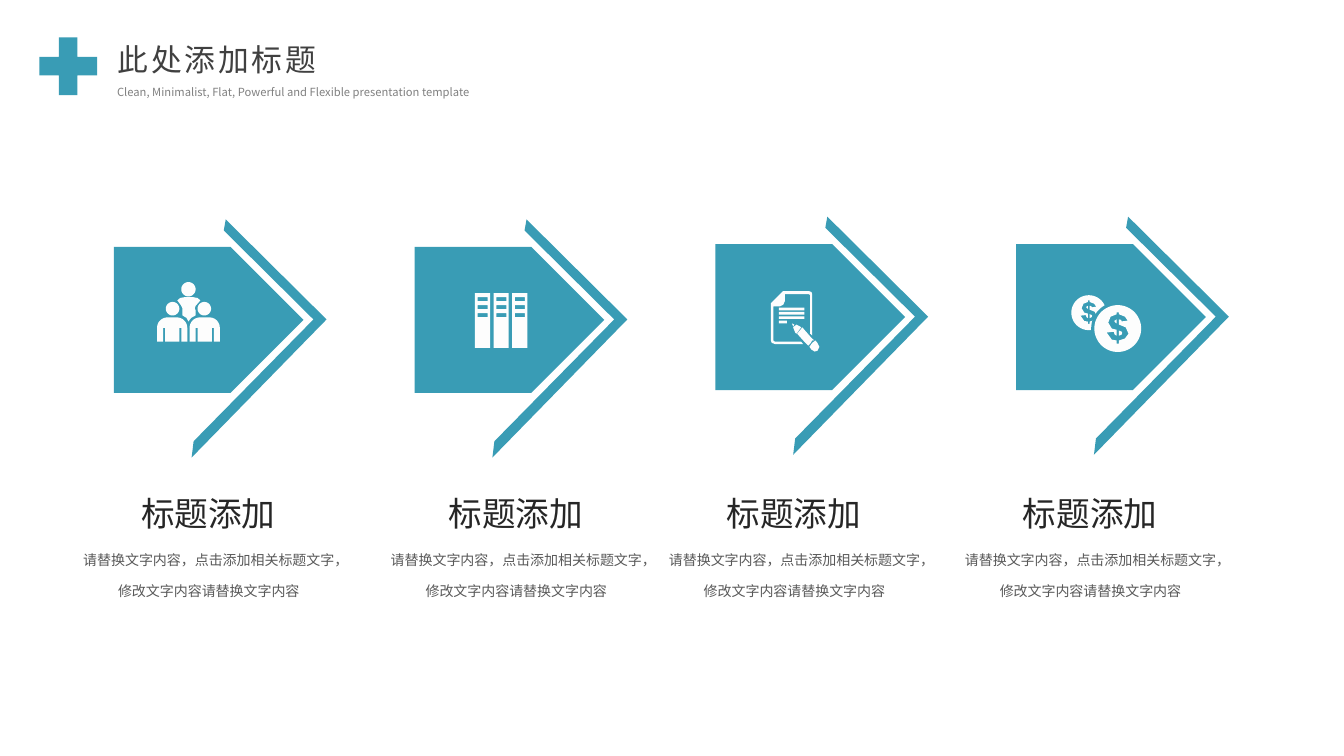
from dataclasses import dataclass
from math import cos, radians, sin

from lxml.etree import SubElement
from pptx import Presentation
from pptx.dml.color import RGBColor
from pptx.enum.shapes import MSO_SHAPE as Preset
from pptx.enum.text import MSO_ANCHOR as Anchor, MSO_AUTO_SIZE as AutoSize, PP_ALIGN as Align
from pptx.oxml.ns import qn
from pptx.util import Cm, Pt

TEAL = RGBColor(0x39, 0x9C, 0xB5)
ICON_WHITE = RGBColor(0xFD, 0xFD, 0xFD)
TITLE_GRAY = RGBColor(0x40, 0x40, 0x40)
SUBTITLE_GRAY = RGBColor(0x80, 0x80, 0x80)
HEADING_GRAY = RGBColor(0x26, 0x26, 0x26)
BODY_GRAY = RGBColor(0x59, 0x59, 0x59)
FONT = "Noto Sans CJK SC"

Points = list[tuple[float, float]]
HEADING = "标题添加"
BODY = "请替换文字内容，点击添加相关标题文字，修改文字内容请替换文字内容"


@dataclass
class Layer:
    contours: list[Points]
    color: RGBColor = ICON_WHITE


@dataclass
class Column:
    top: float
    text_left: float
    icon_x: float  # icon offset from the arrow's corner
    icon_y: float
    icon: list[Layer]


# Outline helpers, all in centimetres
def arc(cx: float, cy: float, r: float, start: int = 0, end: int = 360) -> Points:
    return [(cx + r * cos(radians(a)), cy + r * sin(radians(a)))
            for a in range(start, end + 1, 6)]


def rect(x: float, y: float, w: float, h: float) -> Points:
    return [(x, y), (x + w, y), (x + w, y + h), (x, y + h)]


def place(points: Points, dx: float, dy: float, scale: float = 1) -> Points:
    return [(dx + x * scale, dy + y * scale) for x, y in points]


def people_icon() -> list[Layer]:
    heads = [arc(0.79, 0.18, 0.18), arc(0.39, 0.67, 0.17), arc(1.19, 0.67, 0.17)]
    back_torso = [(0.97, 0.84), (0.97, 0.71), (0.95, 0.66), (0.97, 0.6), (1.09, 0.46),
                  (1.02, 0.4), (0.91, 0.38), (0.69, 0.38), (0.58, 0.4), (0.51, 0.46),
                  (0.6, 0.58), (0.64, 0.66), (0.64, 0.84), (0.74, 0.9), (0.79, 0.99),
                  (0.86, 0.9)]
    front_torso = [(0, 1.5), *arc(0.26, 1.15, 0.26, 180, 270), *arc(0.5, 1.15, 0.26, 270, 360),
                   (0.76, 1.5), (0.61, 1.5), (0.61, 1.15), (0.56, 1.15), (0.56, 1.5),
                   (0.2, 1.5), (0.2, 1.15), (0.15, 1.15), (0.15, 1.5)]
    return [Layer([*heads, back_torso, front_torso, place(front_torso, 0.82, 0)])]


def binders_icon() -> list[Layer]:
    contours = []
    for x in (0, 0.47, 0.94):
        contours.append(rect(x, 0, 0.38, 1.38))
        contours += [rect(x + 0.07, y, 0.25, 0.1) for y in (0.1, 0.3, 0.5)]
    return [Layer(contours)]


def document_icon() -> list[Layer]:
    page = [(0.06, 0.38), (0.23, 0.38), (0.31, 0.34), (0.35, 0.25), (0.35, 0.07), (0.95, 0.07),
            (0.99, 0.1), (0.99, 1.07), (1.04, 1.12), (1.04, 0.08), (1.02, 0.02), (0.97, 0),
            (0.3, 0), (0, 0.3), (0, 1.25), (0.02, 1.3), (0.1, 1.33), (0.81, 1.33),
            (0.76, 1.27), (0.1, 1.27), (0.06, 1.24)]
    lines = [rect(0.2, 0.41 + 0.11 * i, w, 0.07) for i, w in enumerate((0.64, 0.64, 0.64, 0.2))]
    pencil = [
        [(0.53, 0.81), (0.59, 0.84), (0.56, 0.89)],
        [(0.64, 1.07), (0.76, 0.91), (0.74, 0.89), (0.64, 0.84), (0.56, 0.91), (0.61, 1.04)],
        [(1.04, 1.24), (1.09, 1.24), (0.99, 1.14), (0.79, 0.91), (0.66, 1.07), (0.84, 1.27),
         (0.94, 1.37), (0.99, 1.32)],
        [(0.97, 1.4), (1.02, 1.47), (1.1, 1.52), (1.17, 1.5), (1.22, 1.4), (1.17, 1.3),
         (1.12, 1.24), (1.04, 1.3)],
    ]
    return [Layer([page, *lines, *pencil])]


def coin(cx: float, cy: float, r: float, sign_scale: float) -> Layer:
    dollar = [(0.25, -0.2), (0.1, -0.18), (0.08, -0.22), (0.03, -0.23), (0.03, -0.1),
              (0.2, -0.03), (0.27, 0.13), (0.18, 0.25), (0.03, 0.3), (0.03, 0.38),
              (-0.03, 0.38), (-0.03, 0.3), (-0.15, 0.28), (-0.28, 0.1), (-0.1, 0.08),
              (-0.08, 0.15), (-0.03, 0.18), (-0.03, 0.03), (-0.15, 0), (-0.24, -0.15),
              (-0.18, -0.3), (-0.03, -0.36), (-0.03, -0.41), (0.03, -0.41), (0.03, -0.36),
              (0.18, -0.3)]
    upper_bowl = [(-0.03, -0.23), (-0.09, -0.19), (-0.06, -0.15), (-0.03, -0.13)]
    lower_bowl = [(0.03, 0.18), (0.1, 0.15), (0.11, 0.11), (0.1, 0.08), (0.03, 0.05)]
    sign = [place(part, cx, cy, sign_scale) for part in (dollar, upper_bowl, lower_bowl)]
    return Layer([arc(cx, cy, r), *sign])


def coins_icon() -> list[Layer]:
    gap = Layer([arc(1.19, 0.84, 0.67)], TEAL)
    return [coin(0.46, 0.44, 0.44, 0.75), gap, coin(1.19, 0.84, 0.59, 1)]


# Drawing functions
def paint(sp, color: RGBColor) -> None:
    sp.shadow.inherit = False
    sp.fill.solid()
    sp.fill.fore_color.rgb = color
    sp.line.fill.background()


def draw_preset(s, kind, x: float, y: float, w: float, h: float) -> None:
    paint(s.shapes.add_shape(kind, Cm(x), Cm(y), Cm(w), Cm(h)), TEAL)


def draw_outline(s, layer: Layer, left: float, top: float) -> None:
    paths = [[(Cm(x), Cm(y)) for x, y in place(c, left, top)] for c in layer.contours]
    builder = s.shapes.build_freeform(*paths[0][0])
    for i, path in enumerate(paths):
        if i:
            builder.move_to(*path[0])
        builder.add_line_segments(path[1:], close=True)
    paint(builder.convert_to_shape(), layer.color)


def write_text(sp, text: str, x: float, y: float, w: float, h: float, *, size: float,
               color: RGBColor, align=Align.LEFT, line: float = 1, wrap: bool = True,
               inset_x: float = 0.25, inset_y: float = 0.13, spacing: int = 0) -> None:
    sp.left, sp.top, sp.width, sp.height = Cm(x), Cm(y), Cm(w), Cm(h)
    tf = sp.text_frame
    tf.word_wrap, tf.auto_size, tf.vertical_anchor = wrap, AutoSize.NONE, Anchor.TOP
    tf.margin_left = tf.margin_right = Cm(inset_x)
    tf.margin_top = tf.margin_bottom = Cm(inset_y)
    p = tf.paragraphs[0]
    p.alignment, p.line_spacing = align, line
    r = p.add_run()
    r.text = text
    r.font.size, r.font.name, r.font.color.rgb = Pt(size), FONT, color
    props = r.font._element
    SubElement(props, qn("a:ea"), typeface=FONT)
    if spacing:
        props.set("spc", str(spacing))


def add_box(s):
    return s.shapes.add_textbox(0, 0, 0, 0)


CHEVRON = Layer([[(2.82, -0.69), (5.36, 1.83), (1.96, 5.31), (2.01, 4.9), (5.03, 1.83),
                  (2.77, -0.41)]], TEAL)
FIRST_LEFT, PITCH = 2.87, 7.58
COLUMNS = [
    Column(6.22, 1.78, 1.09, 0.89, people_icon()),
    Column(6.22, 9.53, 1.52, 1.17, binders_icon()),
    Column(6.15, 16.54, 1.4, 1.19, document_icon()),
    Column(6.15, 24.0, 1.37, 1.29, coins_icon()),
]


def main() -> None:
    prs = Presentation()
    prs.slide_width, prs.slide_height = Cm(33.87), Cm(19.05)
    s = prs.slides.add_slide(prs.slide_layouts[5])

    # Header
    write_text(s.shapes.title, "此处添加标题", 2.77, 0.92, 7.42, 1.14, size=22,
               color=TITLE_GRAY, inset_x=0.2, inset_y=0.1, spacing=200)
    draw_preset(s, Preset.MATH_PLUS, 0.73, 0.68, 1.98, 1.98)
    write_text(add_box(s), "Clean, Minimalist, Flat, Powerful and Flexible presentation template",
               2.7, 1.92, 13.79, 0.66, size=8, color=SUBTITLE_GRAY, line=1.3)

    # Arrows with icons and captions
    for i, col in enumerate(COLUMNS):
        left = FIRST_LEFT + i * PITCH
        draw_outline(s, CHEVRON, left, col.top)
        draw_preset(s, Preset.PENTAGON, left, col.top, 4.78, 3.68)
        for layer in col.icon:
            draw_outline(s, layer, left + col.icon_x, col.top + col.icon_y)
        write_text(add_box(s), BODY, col.text_left, 13.44, 6.96, 1.7, size=10,
                   color=BODY_GRAY, align=Align.CENTER, line=1.8)
        write_text(add_box(s), HEADING, col.text_left + 1.5, 12.29, 3.94, 1.27, size=24,
                   color=HEADING_GRAY, align=Align.CENTER, wrap=False)

    prs.save("out.pptx")


if __name__ == "__main__":
    main()
